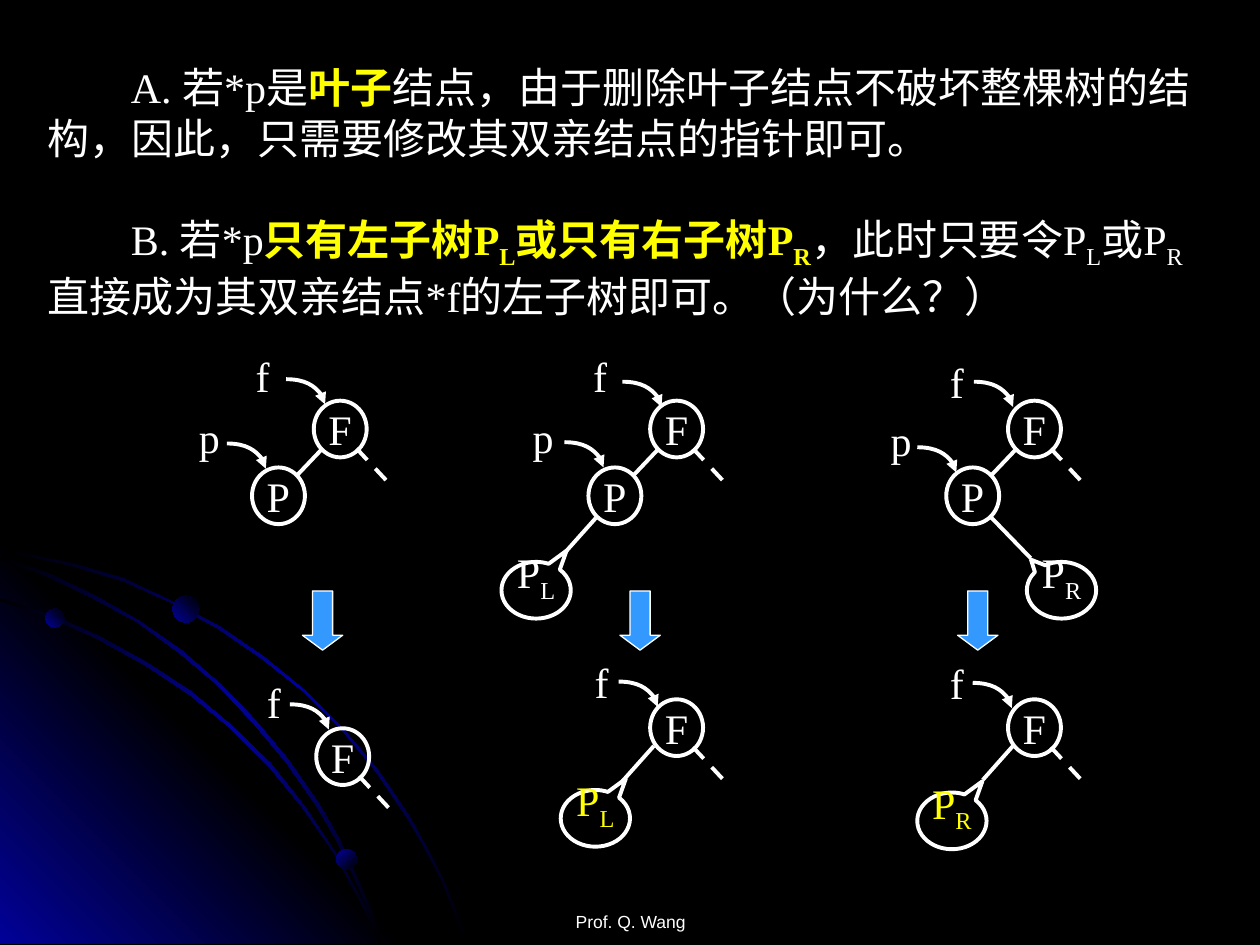
from lxml import etree
from pptx import Presentation
from pptx.dml.color import RGBColor
from pptx.enum.dml import MSO_LINE
from pptx.enum.shapes import MSO_CONNECTOR as CONN, MSO_SHAPE as SHAPE
from pptx.enum.text import MSO_ANCHOR as ANCHOR, PP_ALIGN as ALIGN
from pptx.oxml import parse_xml
from pptx.oxml.ns import nsdecls, qn
from pptx.util import Inches, Pt

COLORS = {
    "black": "000000",
    "navy": "010199",
    "white": "FFFFFF",
    "yellow": "FFFF00",
    "arrow": "3399FF",
}
RGB = {name: RGBColor.from_string(value) for name, value in COLORS.items()}


def write(p, runs, color="white", size=24, font="Times New Roman"):
    for text, flags in runs:
        r = p.add_run()
        r.text = text
        r.font.size = Pt(size)
        r.font.name = font
        r.font.bold = "b" in flags
        r.font.color.rgb = RGB["yellow" if "b" in flags else color]
        if "_" in flags:
            r.font._element.set("baseline", "-25000")


def link(kind, x1, y1, x2, y2):
    cn = s.shapes.add_connector(kind, Inches(x1), Inches(y1), Inches(x2), Inches(y2))
    cn.line.color.rgb = RGB["white"]
    cn.line.width = Pt(2.25)
    etree.SubElement(cn._element.spPr, qn("a:effectLst"))
    return cn


prs = Presentation()
prs.slide_width, prs.slide_height = Inches(10), Inches(7.5)
s = prs.slides.add_slide(prs.slide_layouts[6])
s.background.fill.solid()
s.background.fill.fore_color.rgb = RGB["black"]

outer_arc = [
    (0.57, 4.47), (0.28, 4.41), (0, 4.35), (0, 4.38), (0.28, 4.43), (0.56, 4.49),
    (0.97, 4.61), (1.35, 4.78), (1.73, 4.99), (2.08, 5.23), (2.41, 5.49), (2.71, 5.79),
    (2.98, 6.12), (3.23, 6.49), (3.37, 6.73), (3.5, 6.98), (3.6, 7.23), (3.7, 7.49),
    (3.72, 7.49), (3.62, 7.23), (3.52, 6.98), (3.39, 6.73), (3.25, 6.48), (3, 6.11),
    (2.72, 5.78), (2.42, 5.48), (2.09, 5.21), (1.74, 4.97), (1.36, 4.77), (0.98, 4.59),
]
corner = [(3.22, 7.49), (0, 7.49), (0, 4.27)]
inner_arc = [
    (2.85, 7.14), (2.94, 7.32), (3.01, 7.49), (3.03, 7.49), (2.96, 7.3), (2.86, 7.12),
    (2.66, 6.76), (2.42, 6.4), (2.15, 6.06), (1.84, 5.76), (1.52, 5.49), (1.17, 5.26),
    (0.79, 5.05), (0.41, 4.88), (0, 4.75), (0, 4.77), (0.39, 4.9), (0.77, 5.07),
    (1.15, 5.28), (1.5, 5.51), (1.83, 5.78), (2.13, 6.08), (2.4, 6.41), (2.65, 6.77),
]
middle_arc = [
    (0, 4.42), (0, 4.44), (0.36, 4.57), (0.74, 4.75), (1.09, 4.94), (1.42, 5.18),
    (1.73, 5.44), (2.02, 5.75), (2.27, 6.05), (2.52, 6.41), (2.67, 6.67), (2.8, 6.94),
    (2.92, 7.22), (3.01, 7.49), (3.03, 7.49), (2.94, 7.2), (2.82, 6.93), (2.69, 6.65),
    (2.54, 6.39), (2.29, 6.03), (2.04, 5.73), (1.75, 5.43), (1.44, 5.16), (1.11, 4.93),
    (0.76, 4.73), (0.39, 4.55),
]
band = ["black", "navy", "black"]
decorations = []
for points, stops, angle in [
    (outer_arc, band, 45),
    (corner, ["navy", "black", "navy"], 315),
    (inner_arc, band, 45),
    (middle_arc, band, 45),
]:
    points = [(Inches(x), Inches(y)) for x, y in points]
    fb = s.shapes.build_freeform(*points[0])
    fb.add_line_segments(points[1:], close=True)
    decorations.append((fb.convert_to_shape(), stops, angle))
for x, y, size, angle in [(0.36, 4.83, 0.15, 315), (2.67, 6.74, 0.16, 45), (1.37, 4.73, 0.21, 315)]:
    sp = s.shapes.add_shape(SHAPE.OVAL, Inches(x), Inches(y), Inches(size), Inches(size))
    decorations.append((sp, ["navy", "black"], angle))
for sp, stops, angle in decorations:
    gs = "".join(
        f'<a:gs pos="{100000 * i // (len(stops) - 1)}"><a:srgbClr val="{COLORS[c]}"/></a:gs>'
        for i, c in enumerate(stops)
    )
    geometry = sp._element.spPr.find(qn("a:custGeom"))
    if geometry is None:
        geometry = sp._element.spPr.find(qn("a:prstGeom"))
    geometry.addnext(parse_xml(
        f'<a:gradFill {nsdecls("a")} rotWithShape="1"><a:gsLst>{gs}</a:gsLst>'
        f'<a:lin ang="{angle * 60000}" scaled="0"/></a:gradFill>'
    ))
    sp.line.fill.background()
    sp.shadow.inherit = False

tf = s.shapes.add_textbox(Inches(0.28), Inches(0.44), Inches(9.45), Inches(2.12)).text_frame
tf.word_wrap = True
cases = [
    [("A. 若*p是", ""), ("叶子", "b"),
     ("结点，由于删除叶子结点不破坏整棵树的结构，因此，只需要修改其双亲结点的指针即可。", "")],
    [("B. 若*p", ""), ("只有左子树P", "b"), ("L", "b_"), ("或只有右子树P", "b"), ("R", "b_"),
     ("，此时只要令P", ""), ("L", "_"), ("或P", ""), ("R", "_"),
     ("直接成为其双亲结点*f的左子树即可。（为什么？）", "")],
]
for i, runs in enumerate(cases):
    p = tf.add_paragraph() if i else tf.paragraphs[0]
    p._p.get_or_add_pPr().set("indent", str(Inches(0.66)))
    p.space_before = Pt(29 * i)
    write(p, runs)

upper_x = [2.49, 5.16, 8]
parents = [(x, 3.18) for x in upper_x] + [(2.51, 5.78), (5.16, 5.55), (8, 5.55)]
nodes = [("F", x, y) for x, y in parents] + [("P", x - 0.49, 3.71) for x in upper_x]
bubbles = [
    ("L", 3.98, 4.46, 0.44, -0.7, "white"),
    ("R", 8.15, 4.46, -0.44, -0.54, "white"),
    ("L", 4.45, 6.27, 0.44, -0.7, "yellow"),
    ("R", 7.28, 6.29, 0.44, -0.7, "yellow"),
]
outlined = []
for name, x, y in nodes:
    sp = s.shapes.add_shape(SHAPE.OVAL, Inches(x), Inches(y), Inches(0.42), Inches(0.45))
    outlined.append((sp, [(name, "")], "white", ANCHOR.MIDDLE))
for side, x, y, tip_x, tip_y, color in bubbles:
    sp = s.shapes.add_shape(SHAPE.OVAL_CALLOUT, Inches(x), Inches(y), Inches(0.55), Inches(0.45))
    sp.adjustments[0], sp.adjustments[1] = tip_x, tip_y
    outlined.append((sp, [("P", ""), (side, "_")], color, ANCHOR.BOTTOM))
for sp, runs, color, anchor in outlined:
    sp.fill.background()
    sp.line.color.rgb = RGB["white"]
    sp.line.width = Pt(2.25)
    sp.shadow.inherit = False
    tf = sp.text_frame
    tf.word_wrap = False
    tf.vertical_anchor = anchor
    tf.paragraphs[0].alignment = ALIGN.CENTER
    write(tf.paragraphs[0], runs, color)

for x, y in parents:
    cn = link(CONN.STRAIGHT, x + 0.34, y + 0.38, x + 0.62, y + 0.68)
    cn.line.dash_style = MSO_LINE.DASH
for x in upper_x:
    link(CONN.STRAIGHT, x + 0.06, 3.57, x - 0.13, 3.77)
for ends in [(4.73, 4.11, 4.48, 4.39), (7.87, 4.11, 8.18, 4.43),
             (5.19, 5.92, 4.94, 6.2), (8.04, 5.92, 7.8, 6.19)]:
    link(CONN.STRAIGHT, *ends)

pointers = [
    ("f", 1.93, 2.73, 2.27, 3.01), ("p", 1.48, 3.22, 1.8, 3.52), ("f", 2.02, 5.32, 2.3, 5.59),
    ("f", 4.61, 2.73, 4.94, 3.03), ("p", 4.13, 3.22, 4.48, 3.51), ("f", 4.62, 5.16, 4.91, 5.41),
    ("f", 7.44, 2.78, 7.73, 3.03), ("p", 6.97, 3.24, 7.28, 3.55), ("f", 7.44, 5.17, 7.72, 5.42),
]
for name, x, y, start_x, start_y in pointers:
    width = 0.31 if name == "f" else 0.37
    tf = s.shapes.add_textbox(Inches(x), Inches(y), Inches(width), Inches(0.5)).text_frame
    tf.word_wrap = False
    write(tf.paragraphs[0], [(name, "")])
    cn = link(CONN.CURVE, start_x, start_y, start_x + 0.31, start_y + 0.2)
    cn._element.spPr.find(qn("a:prstGeom")).set("prst", "curvedConnector2")
    etree.SubElement(cn.line._get_or_add_ln(), qn("a:tailEnd"), type="triangle")

for x in [2.4, 4.92, 7.6]:
    sp = s.shapes.add_shape(SHAPE.DOWN_ARROW, Inches(x), Inches(4.69), Inches(0.32), Inches(0.47))
    sp.adjustments[0], sp.adjustments[1] = 0.5, 0.37
    sp.fill.solid()
    sp.fill.fore_color.rgb = RGB["arrow"]
    sp.line.color.rgb = RGB["white"]
    sp.line.width = Pt(0.75)
    sp.shadow.inherit = False

tf = s.shapes.add_textbox(Inches(3.42), Inches(6.9), Inches(3.17), Inches(0.5)).text_frame
tf.word_wrap = True
tf.vertical_anchor = ANCHOR.BOTTOM
tf.margin_bottom = 0
tf.paragraphs[0].alignment = ALIGN.CENTER
write(tf.paragraphs[0], [("Prof. Q. Wang", "")], size=10, font="Arial")

prs.save("out.pptx")
